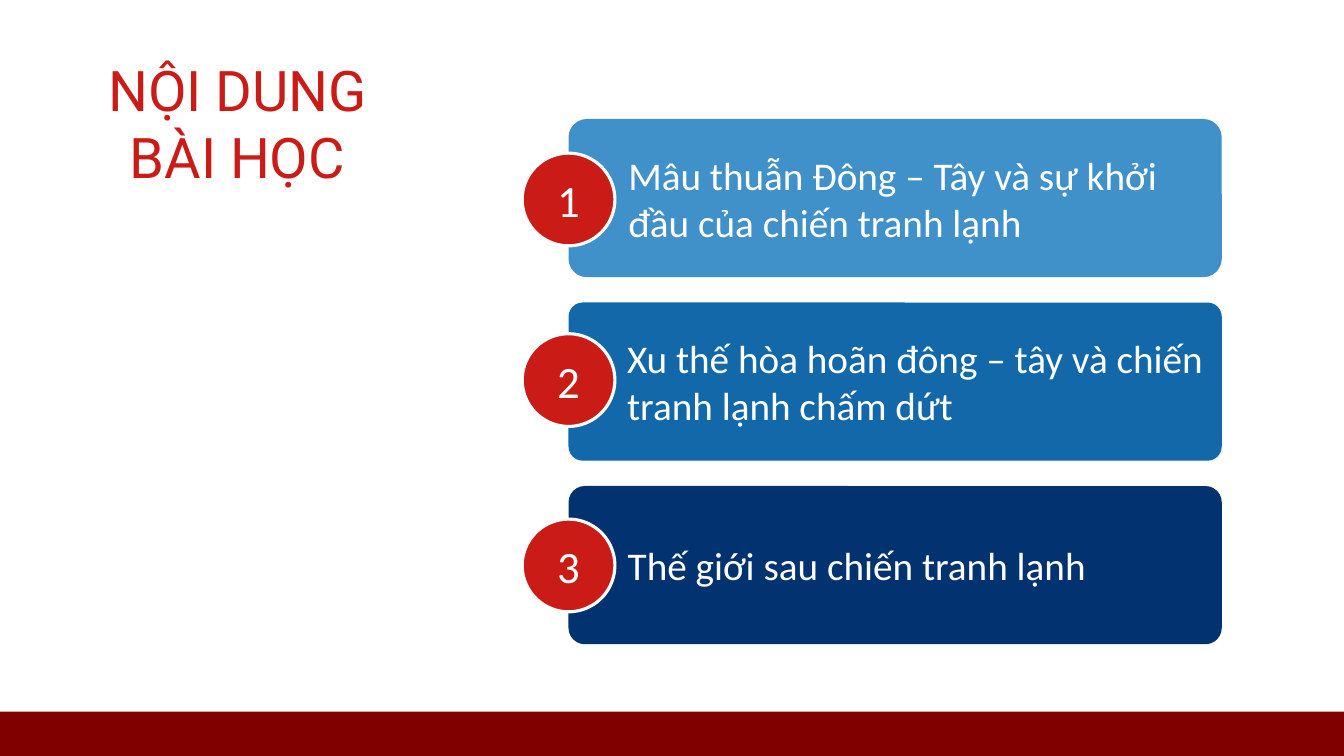
from pptx import Presentation
from pptx.dml.color import RGBColor
from pptx.enum.shapes import MSO_SHAPE as SHAPE
from pptx.enum.text import MSO_ANCHOR as ANCHOR, PP_ALIGN as ALIGN
from pptx.util import Pt

COLORS = {
    "red": "CB1B16", "maroon": "800000", "white": "FFFFFF",
    "light": "4091C9", "mid": "1368AA", "navy": "033270",
}
# text, card colour, corner radius, top of the number badge
TOPICS = [
    ("Mâu thuẫn Đông – Tây và sự khởi đầu của chiến tranh lạnh", "light", 0.116, 109.4),
    ("Xu thế hòa hoãn đông – tây và chiến tranh lạnh chấm dứt", "mid", 0.09, 238.4),
    ("Thế giới sau chiến tranh lạnh", "navy", 0.103, 370.8),
]
CARD_TOP, CARD_STEP = 85, 131.1


def add_filled(kind, x, y, w, h, color):
    sp = s.shapes.add_shape(kind, Pt(x), Pt(y), Pt(w), Pt(h))
    sp.shadow.inherit = False
    sp.fill.solid()
    sp.fill.fore_color.rgb = RGBColor.from_string(COLORS[color])
    sp.line.fill.background()
    return sp


def write(sp, text, size, color="white", font="Calibri", align=ALIGN.CENTER, anchor=ANCHOR.MIDDLE):
    tf = sp.text_frame
    tf.word_wrap = True
    tf.vertical_anchor = anchor
    p = tf.paragraphs[0]
    p.alignment = align
    r = p.add_run()
    r.text = text
    r.font.size = Pt(size)
    r.font.name = font
    r.font.color.rgb = RGBColor.from_string(COLORS[color])


prs = Presentation()
prs.slide_width, prs.slide_height = Pt(960), Pt(540)
s = prs.slides.add_slide(prs.slide_layouts[6])

title = s.shapes.add_textbox(Pt(38.9), Pt(36), Pt(261.4), Pt(104.4))
write(title, "NỘI DUNG BÀI HỌC", 40, "red", "Roboto", anchor=ANCHOR.TOP)

for i, (text, color, radius, badge_top) in enumerate(TOPICS):
    card = add_filled(SHAPE.ROUNDED_RECTANGLE, 406.1, CARD_TOP + i * CARD_STEP, 466.6, 113, color)
    card.adjustments[0] = radius
    card.text_frame.margin_left = Pt(38.9)
    write(card, text, 28, align=ALIGN.LEFT)

    badge = add_filled(SHAPE.OVAL, 373, badge_top, 66.2, 66.2, "red")
    badge.line.color.rgb = RGBColor.from_string(COLORS["white"])
    badge.line.width = Pt(2.25)
    write(badge, str(i + 1), 32)

add_filled(SHAPE.RECTANGLE, 0, 508.3, 960, 31.7, "maroon")

prs.save("out.pptx")
